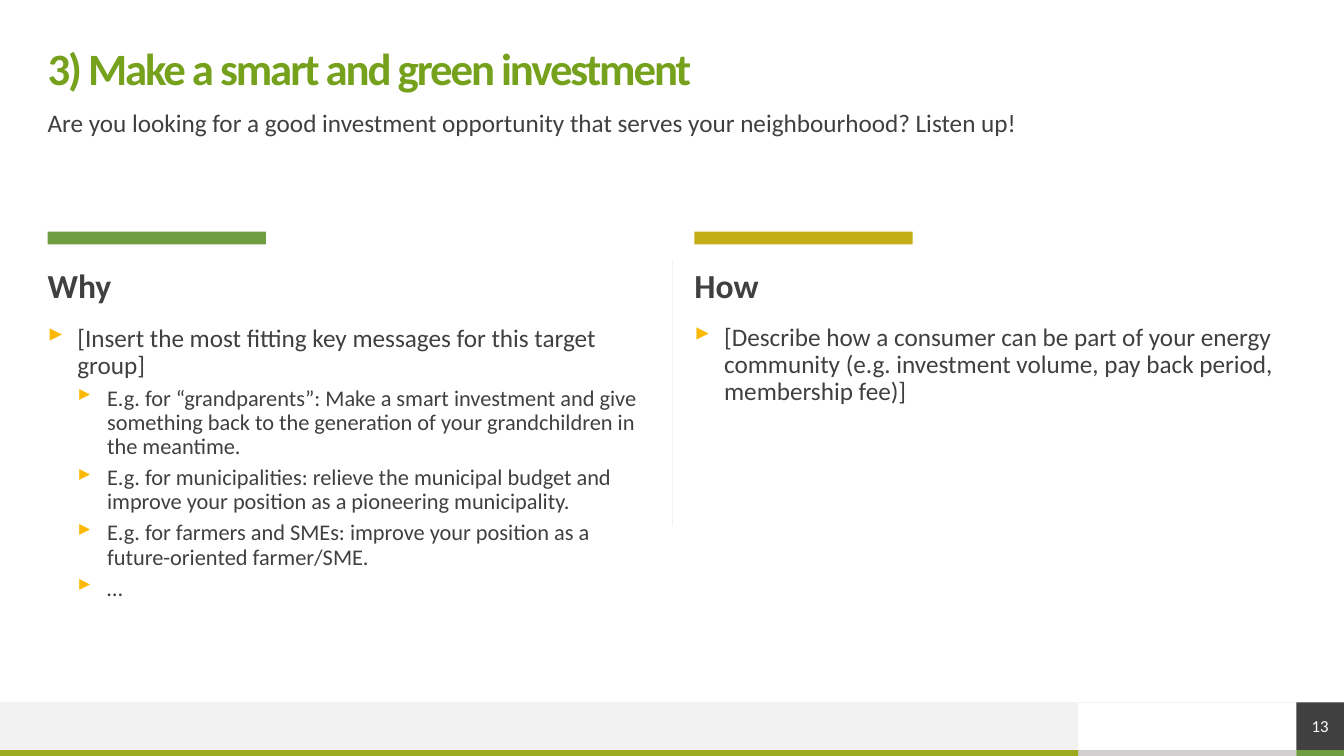
from dataclasses import dataclass

from lxml.etree import SubElement
from pptx import Presentation
from pptx.dml.color import RGBColor as RGB
from pptx.enum.shapes import MSO_CONNECTOR as Line, MSO_SHAPE as Kind
from pptx.enum.text import MSO_ANCHOR as Anchor, PP_ALIGN as Align
from pptx.oxml.ns import qn
from pptx.shapes.autoshape import Shape
from pptx.slide import Slide
from pptx.text.text import TextFrame as Frame, _Paragraph as Para
from pptx.util import Cm, Pt

FONT = "Calibri"
WHITE = RGB(0xFF, 0xFF, 0xFF)
DARK = RGB(0x40, 0x40, 0x40)
PALE = RGB(0xF2, 0xF2, 0xF2)
GREY = RGB(0xD0, 0xCE, 0xCE)
LIME = RGB(0x9C, 0xAA, 0x20)
GREEN = RGB(0x6D, 0x9D, 0x40)
LEAF = RGB(0x75, 0xA1, 0x1D)
OLIVE = RGB(0xC3, 0xAD, 0x16)
AMBER = RGB(0xFB, 0xB8, 0x04)

# All lengths are in centimetres.
WIDTH, HEIGHT = 33.87, 19.05
EDGE = 1.2
FULL = WIDTH - 2 * EDGE
FOOT = 17.7
STRIP = 18.9
SPLIT = 27.17
LAST = WIDTH - EDGE
STEP = 0.75  # indent of each bullet level


@dataclass
class Box:
    left: float
    top: float
    width: float
    height: float


@dataclass
class Block:
    box: Box
    fill: RGB


@dataclass
class Style:
    size: float
    color: RGB = DARK
    bold: bool = False


@dataclass
class Point:
    text: str
    level: int = 0


@dataclass
class Column:
    left: float
    color: RGB
    head: str
    top: float
    points: list[Point]


BLOCKS = [
    Block(Box(SPLIT, STRIP, LAST - SPLIT, HEIGHT - STRIP), GREY),
    Block(Box(0, FOOT, SPLIT, EDGE), PALE),
    Block(Box(0, STRIP, SPLIT, HEIGHT - STRIP), LIME),
    Block(Box(LAST, STRIP, EDGE, HEIGHT - STRIP), GREEN),
]
COLUMNS = [
    Column(EDGE, GREEN, "Why", 8.2, [
        Point("[Insert the most fitting key messages for this target group]"),
        Point("E.g. for “grandparents”: Make a smart investment and give "
              "something back to the generation of your grandchildren in "
              "the meantime.", 1),
        Point("E.g. for municipalities: relieve the municipal budget and "
              "improve your position as a pioneering municipality.", 1),
        Point("E.g. for farmers and SMEs: improve your position as a "
              "future-oriented farmer/SME.", 1),
        Point("…", 1),
    ]),
    Column(17.5, OLIVE, "How", 8.18, [
        Point("[Describe how a consumer can be part of your energy community "
              "(e.g. investment volume, pay back period, membership fee)]"),
    ]),
]


def place(box: Box) -> tuple[Cm, Cm, Cm, Cm]:
    return Cm(box.left), Cm(box.top), Cm(box.width), Cm(box.height)


def add_block(slide: Slide, block: Block) -> Shape:
    shape = slide.shapes.add_shape(Kind.RECTANGLE, *place(block.box))
    shape.shadow.inherit = False
    shape.fill.solid()
    shape.fill.fore_color.rgb = block.fill
    shape.line.fill.background()
    return shape


def add_line(slide: Slide, x1: float, y1: float, x2: float, y2: float) -> None:
    line = slide.shapes.add_connector(
        Line.STRAIGHT, Cm(x1), Cm(y1), Cm(x2), Cm(y2))
    line.line.color.rgb = PALE
    line.line.width = Pt(0.5)
    SubElement(line._element.spPr, qn("a:effectLst"))


def set_frame(frame: Frame, anchor: Anchor) -> None:
    """Wrap the text and take the margins away."""
    frame.word_wrap = True
    frame.vertical_anchor = anchor
    frame.margin_left = frame.margin_right = 0
    frame.margin_top = frame.margin_bottom = 0


def set_runs(para: Para, style: Style) -> None:
    for run in para.runs:
        run.font.name = FONT
        run.font.size = Pt(style.size)
        run.font.bold = style.bold
        run.font.color.rgb = style.color


def add_text(slide: Slide, box: Box, text: str, style: Style,
             anchor: Anchor = Anchor.TOP) -> Para:
    frame = slide.shapes.add_textbox(*place(box)).text_frame
    set_frame(frame, anchor)
    frame.text = text
    para = frame.paragraphs[0]
    para.line_spacing = 0.9
    set_runs(para, style)
    return para


def add_mark(para: Para, level: int) -> None:
    """Give the paragraph an amber bullet and a hanging indent."""
    props = para._p.get_or_add_pPr()
    props.set("marL", str(Cm(STEP * (level + 1))))
    props.set("indent", str(-Cm(STEP)))
    tint = SubElement(props, qn("a:buClr"))
    SubElement(tint, qn("a:srgbClr"), val=str(AMBER))
    SubElement(props, qn("a:buChar"), char="▸")


def add_points(slide: Slide, box: Box, points: list[Point]) -> None:
    frame = slide.shapes.add_textbox(*place(box)).text_frame
    set_frame(frame, Anchor.TOP)
    for i, point in enumerate(points):
        para = frame.add_paragraph() if i else frame.paragraphs[0]
        para.text = point.text
        para.level = point.level
        add_mark(para, point.level)
        para.line_spacing = 0.9
        if i:
            para.space_before = Pt(5)
        set_runs(para, Style(18 - 2 * point.level))


def add_column(slide: Slide, col: Column) -> None:
    add_block(slide, Block(Box(col.left, 5.84, 5.5, 0.32), col.color))
    add_text(slide, Box(col.left, 6.78, 15.2, 1), col.head,
             Style(24, bold=True))
    add_points(slide, Box(col.left, col.top, 15.2, 6.1), col.points)


def add_number(slide: Slide) -> None:
    shape = add_block(slide, Block(Box(LAST, FOOT, EDGE, EDGE), DARK))
    frame = shape.text_frame
    set_frame(frame, Anchor.MIDDLE)
    frame.text = "13"
    para = frame.paragraphs[0]
    para.alignment = Align.CENTER
    set_runs(para, Style(12, WHITE))


def main() -> None:
    deck = Presentation()
    deck.slide_width, deck.slide_height = Cm(WIDTH), Cm(HEIGHT)
    slide = deck.slides.add_slide(deck.slide_layouts[6])
    for block in BLOCKS:
        add_block(slide, block)
    add_line(slide, WIDTH, FOOT, 0, FOOT)
    title = add_text(slide, Box(EDGE, EDGE, FULL, EDGE),
                     "3) Make a smart and green investment",
                     Style(32, LEAF, True), Anchor.MIDDLE)
    title.runs[0].font._element.set("spc", "-150")
    add_text(slide, Box(EDGE, 2.8, FULL, 1),
             "Are you looking for a good investment opportunity that serves "
             "your neighbourhood? Listen up!", Style(18))
    for col in COLUMNS:
        add_column(slide, col)
    add_line(slide, WIDTH / 2, 6.55, WIDTH / 2, 13.25)
    add_number(slide)
    deck.save("out.pptx")


if __name__ == "__main__":
    main()
